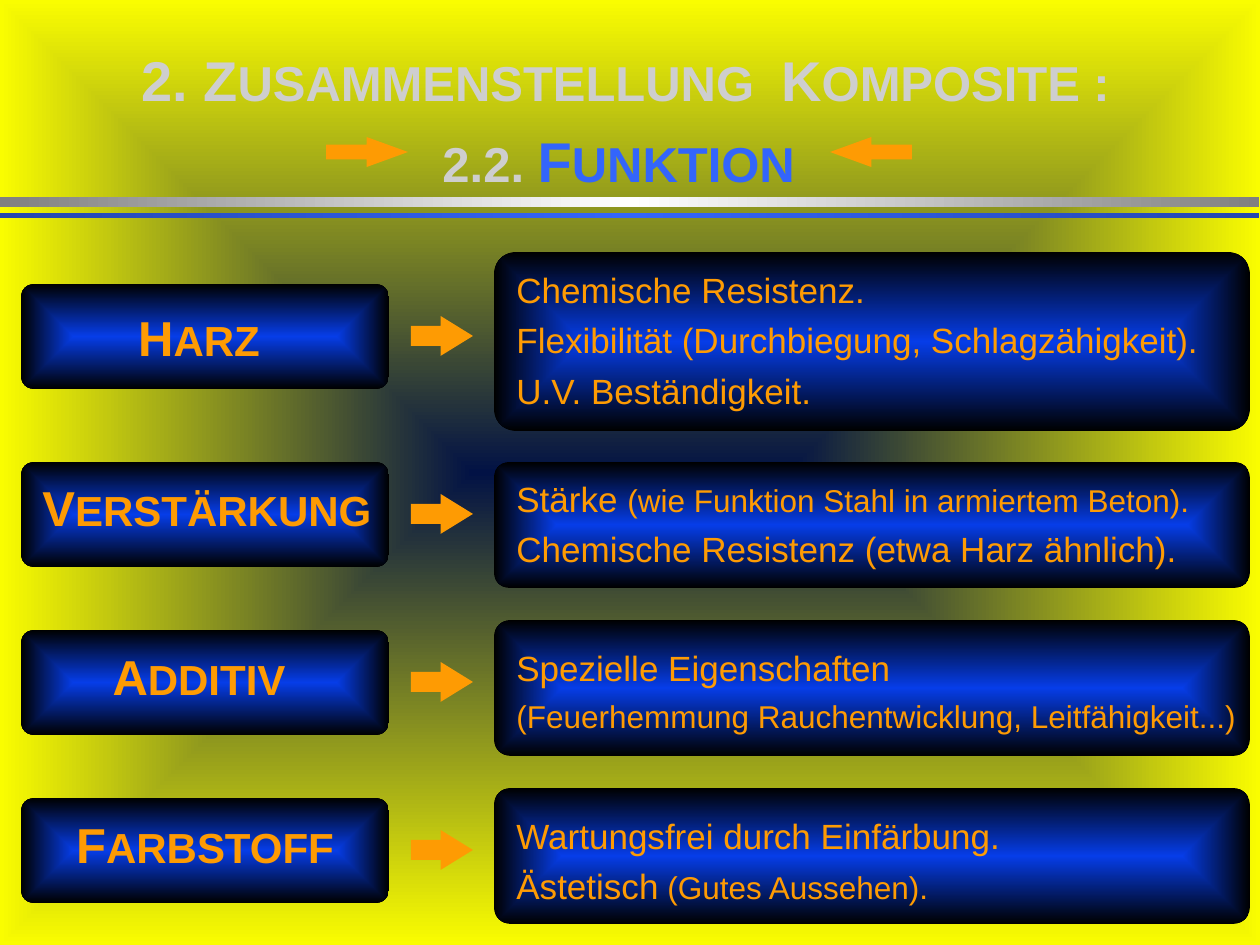
from dataclasses import dataclass

from lxml import etree
from pptx import Presentation
from pptx.dml.color import RGBColor
from pptx.enum.shapes import MSO_SHAPE
from pptx.enum.text import MSO_ANCHOR, PP_ALIGN
from pptx.oxml.ns import qn
from pptx.util import Emu, Pt

RECT, ROUND, ARROW = MSO_SHAPE.RECTANGLE, MSO_SHAPE.ROUNDED_RECTANGLE, MSO_SHAPE.RIGHT_ARROW
LEFT, CENTER = PP_ALIGN.LEFT, PP_ALIGN.CENTER
TOP, BOTTOM = MSO_ANCHOR.TOP, MSO_ANCHOR.BOTTOM
DPI = 126


@dataclass(frozen=True)
class Theme:
    font: str = "Arial"
    navy: str = "021245"
    yellow: str = "FAFD00"
    core: str = "063DE8"
    black: str = "000000"
    orange: str = "FE9B03"
    silver: str = "CECECE"
    blue: str = "3365FB"
    deep: str = "2447B0"
    gray: str = "808080"
    white: str = "FFFFFF"
    head: int = 32
    cap: int = 28
    small: int = 24
    body: int = 20
    note: int = 18


@dataclass(frozen=True)
class Box:
    x: int
    y: int
    w: int
    h: int

    def emu(self) -> list[Emu]:
        return [Emu(round(v * 914400 / DPI)) for v in (self.x, self.y, self.w, self.h)]


@dataclass(frozen=True)
class Run:
    text: str
    size: int
    color: str


@dataclass(frozen=True)
class Style:
    align: int = LEFT
    anchor: int = TOP
    bold: bool = False
    lead: float = 1.0
    gap: int = 0


@dataclass(frozen=True)
class Row:
    name: str
    tile: int
    label: Box
    style: Style
    panel: Box
    body: Box
    lines: list[list[Run]]


T = Theme()


def shade(root, colors: list[str], radial: bool) -> None:
    grad = root.find(".//" + qn("a:gradFill"))
    for child in list(grad):
        grad.remove(child)
    stops = etree.SubElement(grad, qn("a:gsLst"))
    for i, color in enumerate(colors):
        stop = etree.SubElement(stops, qn("a:gs"), pos=str(100000 * i // (len(colors) - 1)))
        etree.SubElement(stop, qn("a:srgbClr"), val=color)
    if radial:
        way = etree.SubElement(grad, qn("a:path"), path="shape")
        etree.SubElement(way, qn("a:fillToRect"), dict.fromkeys("ltrb", "50000"))
    else:
        etree.SubElement(grad, qn("a:lin"), ang="0", scaled="1")


def add_form(slide, kind: int, box: Box):
    shape = slide.shapes.add_shape(kind, *box.emu())
    shape.shadow.inherit = False
    shape.line.fill.background()
    return shape


def add_glow(slide, kind: int, box: Box, colors: list[str], radial: bool) -> None:
    shape = add_form(slide, kind, box)
    if kind == ROUND:
        shape.adjustments[0] = 0.125
    shape.fill.gradient()
    shade(shape.element.spPr, colors, radial)


def add_arrow(slide, box: Box, tip: float, flip: bool = False) -> None:
    shape = add_form(slide, ARROW, box)
    shape.adjustments[0] = 0.5
    shape.adjustments[1] = tip
    shape.fill.solid()
    shape.fill.fore_color.rgb = RGBColor.from_string(T.orange)
    if flip:
        shape.element.spPr.find(qn("a:xfrm")).set("flipH", "1")


def add_text(slide, box: Box, lines: list[list[Run]], style: Style) -> None:
    frame = slide.shapes.add_textbox(*box.emu()).text_frame
    frame.word_wrap = True
    frame.vertical_anchor = style.anchor
    for i, line in enumerate(lines):
        para = frame.add_paragraph() if i else frame.paragraphs[0]
        para.alignment = style.align
        para.line_spacing = style.lead
        para.space_before = Pt(style.gap if i else 0)
        para.font.name = T.font
        para.font.bold = style.bold
        for part in line:
            run = para.add_run()
            run.text = part.text
            run.font.size = Pt(part.size)
            run.font.color.rgb = RGBColor.from_string(part.color)


def big(text: str) -> Run:
    return Run(text, T.body, T.orange)


def fine(text: str) -> Run:
    return Run(text, T.note, T.orange)


def add_row(slide, row: Row) -> None:
    glow = [T.core, T.black]
    add_glow(slide, ROUND, row.panel, glow, True)
    add_text(slide, row.body, row.lines, Style(gap=5))
    add_glow(slide, ROUND, Box(21, row.tile, 368, 105), glow, True)
    name = [Run(row.name[0], T.cap, T.orange), Run(row.name[1:], T.small, T.orange)]
    add_text(slide, row.label, [name], row.style)
    add_arrow(slide, Box(411, row.tile + 32, 62, 40), 0.81)


MID = Style(CENTER, bold=True)
ROWS = [
    Row("HARZ", 284, Box(20, 272, 358, 101), Style(CENTER, bold=True, lead=1.5),
        Box(494, 252, 756, 179), Box(504, 262, 714, 147),
        [[big("Chemische Resistenz.")],
         [big("Flexibilität (Durchbiegung, Schlagzähigkeit).")],
         [big("U.V. Beständigkeit.")]]),
    Row("VERSTÄRKUNG", 462, Box(30, 471, 358, 71), Style(bold=True),
        Box(494, 462, 756, 126), Box(504, 471, 716, 105),
        [[big("Stärke "), fine("(wie Funktion Stahl in armiertem Beton).")],
         [big("Chemische Resistenz (etwa Harz ähnlich).")]]),
    Row("ADDITIV", 630, Box(20, 640, 358, 71), MID,
        Box(494, 620, 756, 136), Box(504, 640, 756, 100),
        [[big("Spezielle Eigenschaften")],
         [fine("(Feuerhemmung Rauchentwicklung, Leitfähigkeit...)")]]),
    Row("FARBSTOFF", 798, Box(42, 808, 326, 71), MID,
        Box(494, 788, 756, 136), Box(504, 808, 716, 105),
        [[big("Wartungsfrei durch Einfärbung.")],
         [big("Ästetisch"), fine(" (Gutes Aussehen).")]]),
]
TITLE = [
    [Run("2. Z", T.head, T.silver), Run("USAMMENSTELLUNG  ", T.cap, T.silver),
     Run("K", T.head, T.silver), Run("OMPOSITE :", T.cap, T.silver)],
    [Run("2.2. ", T.cap, T.silver), Run("F", T.head, T.blue), Run("UNKTION ", T.cap, T.blue)],
]


def main() -> None:
    deck = Presentation()
    deck.slide_width, deck.slide_height = Box(0, 0, 1260, 945).emu()[2:]
    slide = deck.slides.add_slide(deck.slide_layouts[6])
    slide.background.fill.gradient()
    shade(slide.element, [T.navy, T.yellow], True)
    add_glow(slide, RECT, Box(0, 197, 1259, 10), [T.gray, T.white, T.gray], False)
    add_glow(slide, RECT, Box(0, 213, 1259, 5), [T.deep, T.blue, T.deep], False)
    add_text(slide, Box(32, 21, 1187, 179), TITLE, Style(CENTER, BOTTOM, True, 1.2))
    for row in ROWS:
        add_row(slide, row)
    for x, flip in ((326, False), (830, True)):
        add_arrow(slide, Box(x, 137, 82, 30), 1.38, flip)
    deck.save("out.pptx")


if __name__ == "__main__":
    main()
